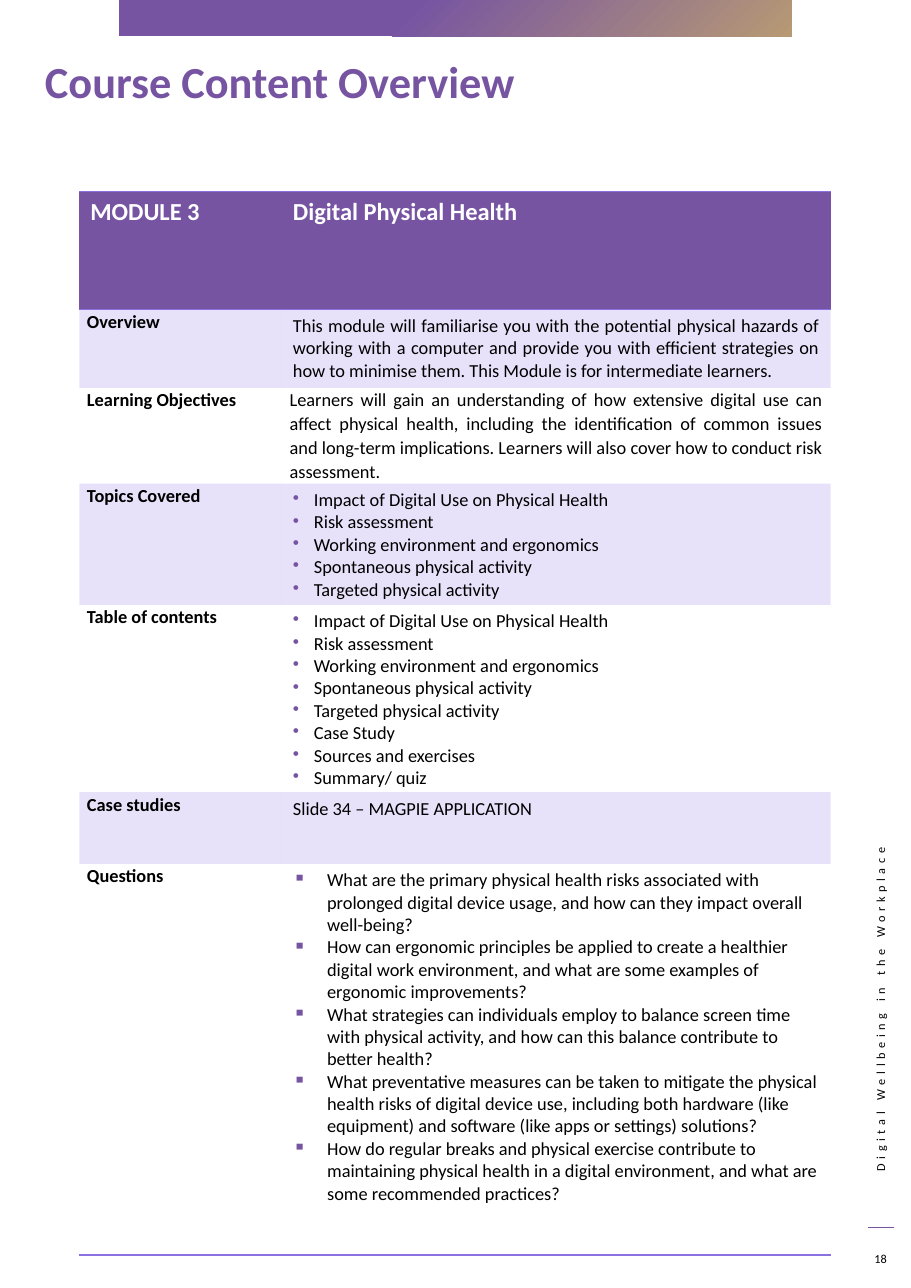
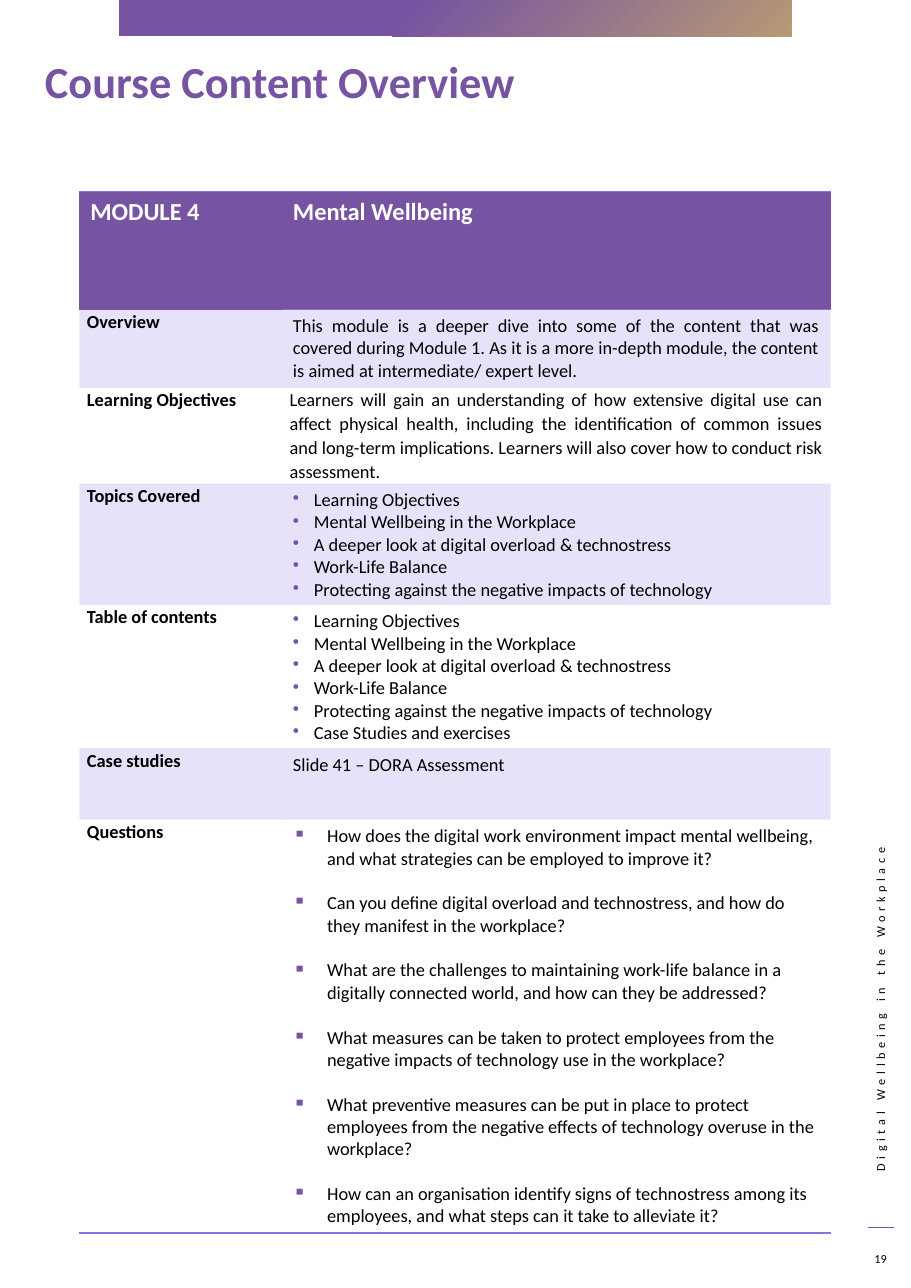
from dataclasses import dataclass
from typing import Optional

import pptx
import pptx.dml.color
import pptx.enum.shapes
import pptx.enum.text
import pptx.oxml
import pptx.oxml.ns
import pptx.oxml.xmlchemy
import pptx.slide
import pptx.table
import pptx.text.text
import pptx.util
from pptx.util import Inches

COLORS = {
    "purple": "7654A2",
    "violet": "8971E1",
    "tan": "B79974",
    "black": "000000",
    "white": "FFFFFF",
}
FONT = "Calibri"
NAMESPACE = pptx.oxml.ns.nsdecls("a")
PLAIN_TABLE_STYLE = "{2D5ABB26-0587-4C30-8999-92F81FD0307C}"
LINE_HEIGHT = 0.2  # one line of table text, in inches
ALIGN = pptx.enum.text.PP_ALIGN
OBJECTIVES = (
    "Learners will gain an understanding of how extensive digital use can affect physical health, "
    "including the identification of common issues and long-term implications. Learners will also "
    "cover how to conduct risk assessment."
)


@dataclass(frozen=True)
class TextStyle:
    size: float = 12
    color: str = "black"
    bold: bool = False
    align: Optional[ALIGN] = None
    line_spacing: Optional[float] = None
    space_after: float = 0
    bullet: str = ""
    indent: float = 0
    tight: bool = False


HEADER = TextStyle(size=16, color="white", bold=True)
LABEL = TextStyle(bold=True, line_spacing=1.07, space_after=8, tight=True)
PLAIN = TextStyle()
JUSTIFIED = TextStyle(align=ALIGN.JUSTIFY)
LOOSE = TextStyle(align=ALIGN.JUSTIFY, line_spacing=1.07, space_after=8, tight=True)
BULLETS = TextStyle(bullet="•", indent=0.19)


@dataclass(frozen=True)
class Row:
    label: str
    paragraphs: list[str]
    style: TextStyle
    height: float


@dataclass(frozen=True)
class Module:
    number: int
    page: int
    title: str
    overview: str
    topics: list[str]
    closing_contents: list[str]
    case_study: str
    questions: list[str]
    question_gap: float
    questions_height: float
    ruled_header_columns: tuple[int, ...]

    def rows(self) -> list[Row]:
        contents = self.topics + self.closing_contents
        question_style = TextStyle(bullet="▪", indent=0.31, space_after=self.question_gap)
        return [
            Row("Overview", [self.overview], JUSTIFIED, 0.71),
            Row("Learning Objectives", [OBJECTIVES], LOOSE, 0.87),
            Row("Topics Covered", self.topics, BULLETS, list_height(self.topics)),
            Row("Table of contents", contents, BULLETS, list_height(contents)),
            Row("Case studies", [self.case_study], PLAIN, 0.65),
            Row("Questions", self.questions, question_style, self.questions_height),
        ]


MODULES = [
    Module(
        number=3,
        page=18,
        title="Digital Physical Health",
        overview="This module will familiarise you with the potential physical hazards of working with "
        "a computer and provide you with efficient strategies on how to minimise them. This Module is "
        "for intermediate learners.",
        topics=[
            "Impact of Digital Use on Physical Health",
            "Risk assessment",
            "Working environment and ergonomics",
            "Spontaneous physical activity",
            "Targeted physical activity",
        ],
        closing_contents=["Case Study", "Sources and exercises", "Summary/ quiz"],
        case_study="Slide 34 – MAGPIE APPLICATION",
        questions=[
            "What are the primary physical health risks associated with prolonged digital device usage, "
            "and how can they impact overall well-being?",
            "How can ergonomic principles be applied to create a healthier digital work environment, and "
            "what are some examples of ergonomic improvements?",
            "What strategies can individuals employ to balance screen time with physical activity, and "
            "how can this balance contribute to better health?",
            "What preventative measures can be taken to mitigate the physical health risks of digital "
            "device use, including both hardware (like equipment) and software (like apps or settings) "
            "solutions?",
            "How do regular breaks and physical exercise contribute to maintaining physical health in a "
            "digital environment, and what are some recommended practices?",
        ],
        question_gap=0,
        questions_height=3.55,
        ruled_header_columns=(0, 1),
    ),
    Module(
        number=4,
        page=19,
        title="Mental Wellbeing",
        overview="This module is a deeper dive into some of the content that was covered during Module 1. "
        "As it is a more in-depth module, the content is aimed at intermediate/ expert level.",
        topics=[
            "Learning Objectives",
            "Mental Wellbeing in the Workplace",
            "A deeper look at digital overload & technostress",
            "Work-Life Balance",
            "Protecting against the negative impacts of technology",
        ],
        closing_contents=["Case Studies and exercises"],
        case_study="Slide 41 – DORA Assessment",
        questions=[
            "How does the digital work environment impact mental wellbeing, and what strategies can be "
            "employed to improve it?",
            "Can you define digital overload and technostress, and how do they manifest in the workplace?",
            "What are the challenges to maintaining work-life balance in a digitally connected world, and "
            "how can they be addressed?",
            "What measures can be taken to protect employees from the negative impacts of technology use "
            "in the workplace?",
            "What preventive measures can be put in place to protect employees from the negative effects "
            "of technology overuse in the workplace?",
            "How can an organisation identify signs of technostress among its employees, and what steps "
            "can it take to alleviate it?",
        ],
        question_gap=14.6,
        questions_height=3.75,
        ruled_header_columns=(1,),
    ),
]


def list_height(items: list[str]) -> float:
    return 0.1 + LINE_HEIGHT * len(items)


def rgb(name: str) -> pptx.dml.color.RGBColor:
    return pptx.dml.color.RGBColor.from_string(COLORS[name])


def element(xml: str) -> pptx.oxml.xmlchemy.BaseOxmlElement:
    """Parse one DrawingML element whose opening tag ends with the marker NS."""
    return pptx.oxml.parse_xml(xml.replace("NS", NAMESPACE, 1))


def write(frame: pptx.text.text.TextFrame, texts: list[str], style: TextStyle) -> None:
    frame.text = "\n".join(texts)
    frame.word_wrap = True
    for paragraph in frame.paragraphs:
        if style.bullet:
            properties = paragraph._p.get_or_add_pPr()
            properties.set("marL", str(Inches(style.indent)))
            properties.set("indent", str(-Inches(style.indent)))
            properties.append(element(f'<a:buClr NS><a:srgbClr val="{COLORS["purple"]}"/></a:buClr>'))
            properties.append(element(f'<a:buChar NS char="{style.bullet}"/>'))
        paragraph.alignment = style.align
        paragraph.line_spacing = style.line_spacing
        paragraph.space_after = pptx.util.Pt(style.space_after)
        for run in paragraph.runs:
            run.font.name = FONT
            run.font.size = pptx.util.Pt(style.size)
            run.font.bold = style.bold
            run.font.color.rgb = rgb(style.color)
    if style.space_after and len(texts) > 1:
        frame.paragraphs[-1].space_after = pptx.util.Pt(0)


def add_frame(slide: pptx.slide.Slide, text: str, box: tuple[float, ...], style: TextStyle):
    shape = slide.shapes.add_textbox(*map(Inches, box))
    write(shape.text_frame, [text], style)
    return shape


def add_band(slide: pptx.slide.Slide) -> None:
    shape = slide.shapes.add_shape(
        pptx.enum.shapes.MSO_SHAPE.RECTANGLE, Inches(1.08), 0, Inches(6.11), Inches(0.33)
    )
    shape.shadow.inherit = False
    shape.line.fill.background()
    shape.fill.background()
    properties = shape._element.spPr
    no_fill = properties.find(pptx.oxml.ns.qn("a:noFill"))
    properties.replace(no_fill, element(
        '<a:gradFill NS rotWithShape="1"><a:gsLst>'
        f'<a:gs pos="0"><a:srgbClr val="{COLORS["tan"]}"/></a:gs>'
        f'<a:gs pos="58000"><a:srgbClr val="{COLORS["purple"]}"/></a:gs></a:gsLst>'
        '<a:path path="circle"><a:fillToRect l="100000" t="100000"/></a:path></a:gradFill>'
    ))


def add_page_frame(slide: pptx.slide.Slide, page: int) -> None:
    """Draw the band, title, side caption and page number that all pages share."""
    caption = add_frame(slide, "Digital Wellbeing in the Workplace", (6.26, 9.21, 3.47, 0.24),
                        TextStyle(size=8, align=ALIGN.RIGHT))
    caption.rotation = 270
    caption.text_frame.paragraphs[0].runs[0]._r.get_or_add_rPr().set("spc", "300")

    rule = slide.shapes.add_connector(
        pptx.enum.shapes.MSO_CONNECTOR.STRAIGHT, *map(Inches, (8.12, 11.14, 7.88, 11.14))
    )
    rule.line.color.rgb = rgb("purple")
    rule.line.width = pptx.util.Pt(0.75)
    rule._element.spPr.append(element("<a:effectLst NS/>"))

    add_band(slide)
    add_frame(slide, "Course Content Overview", (0.31, 0.44, 7.11, 0.81),
              TextStyle(size=29, color="purple", bold=True))
    number = add_frame(slide, str(page), (7.8, 11.28, 0.39, 0.29),
                       TextStyle(size=8, align=ALIGN.CENTER))
    number.text_frame.vertical_anchor = pptx.enum.text.MSO_ANCHOR.MIDDLE


def fill_cell(cell: pptx.table._Cell, texts: list[str], style: TextStyle,
              fill: str = "", opacity: int = 100, edges: str = "") -> None:
    """Write and paint a cell; edges names ruled sides, top (T) before bottom (B)."""
    write(cell.text_frame, texts, style)
    if style.tight:
        cell.margin_left = cell.margin_right = Inches(0.07)
        cell.margin_top = cell.margin_bottom = 0
    properties = cell._tc.get_or_add_tcPr()
    for edge in edges:
        properties.append(element(
            f'<a:ln{edge} NS w="12700"><a:solidFill><a:srgbClr val="{COLORS["violet"]}"/>'
            f"</a:solidFill></a:ln{edge}>"
        ))
    if not fill:
        cell.fill.background()
        return
    cell.fill.solid()
    cell.fill.fore_color.rgb = rgb(fill)
    if opacity < 100:
        color = properties.find(pptx.oxml.ns.qn("a:solidFill"))[0]
        color.append(element(f'<a:alpha NS val="{opacity * 1000}"/>'))


def add_module_table(slide: pptx.slide.Slide, module: Module) -> None:
    rows = module.rows()
    heights = [1.07] + [row.height for row in rows]
    frame = slide.shapes.add_table(
        len(heights), 2, Inches(0.72), Inches(1.74), Inches(6.82), Inches(sum(heights))
    )
    table = frame.table
    table.first_row = table.horz_banding = False
    table._tbl.tblPr.find(pptx.oxml.ns.qn("a:tableStyleId")).text = PLAIN_TABLE_STYLE
    for column, width in zip(table.columns, (1.84, 4.98)):
        column.width = Inches(width)
    for table_row, height in zip(table.rows, heights):
        table_row.height = Inches(height)

    for column, text in enumerate((f"MODULE {module.number}", module.title)):
        edges = "TB" if column in module.ruled_header_columns else "T"
        fill_cell(table.cell(0, column), [text], HEADER, "purple", edges=edges)
    for index, row in enumerate(rows, start=1):
        fill = "violet" if index % 2 else ""
        edges = "B" if index == len(rows) else ""
        fill_cell(table.cell(index, 0), [row.label], LABEL, fill, 20, edges)
        fill_cell(table.cell(index, 1), row.paragraphs, row.style, fill, 20, edges)


def main() -> None:
    presentation = pptx.Presentation()
    presentation.slide_width, presentation.slide_height = Inches(8.27), Inches(11.69)
    for module in MODULES:
        slide = presentation.slides.add_slide(presentation.slide_layouts[6])
        add_page_frame(slide, module.page)
        add_module_table(slide, module)
    presentation.save("out.pptx")


if __name__ == "__main__":
    main()
